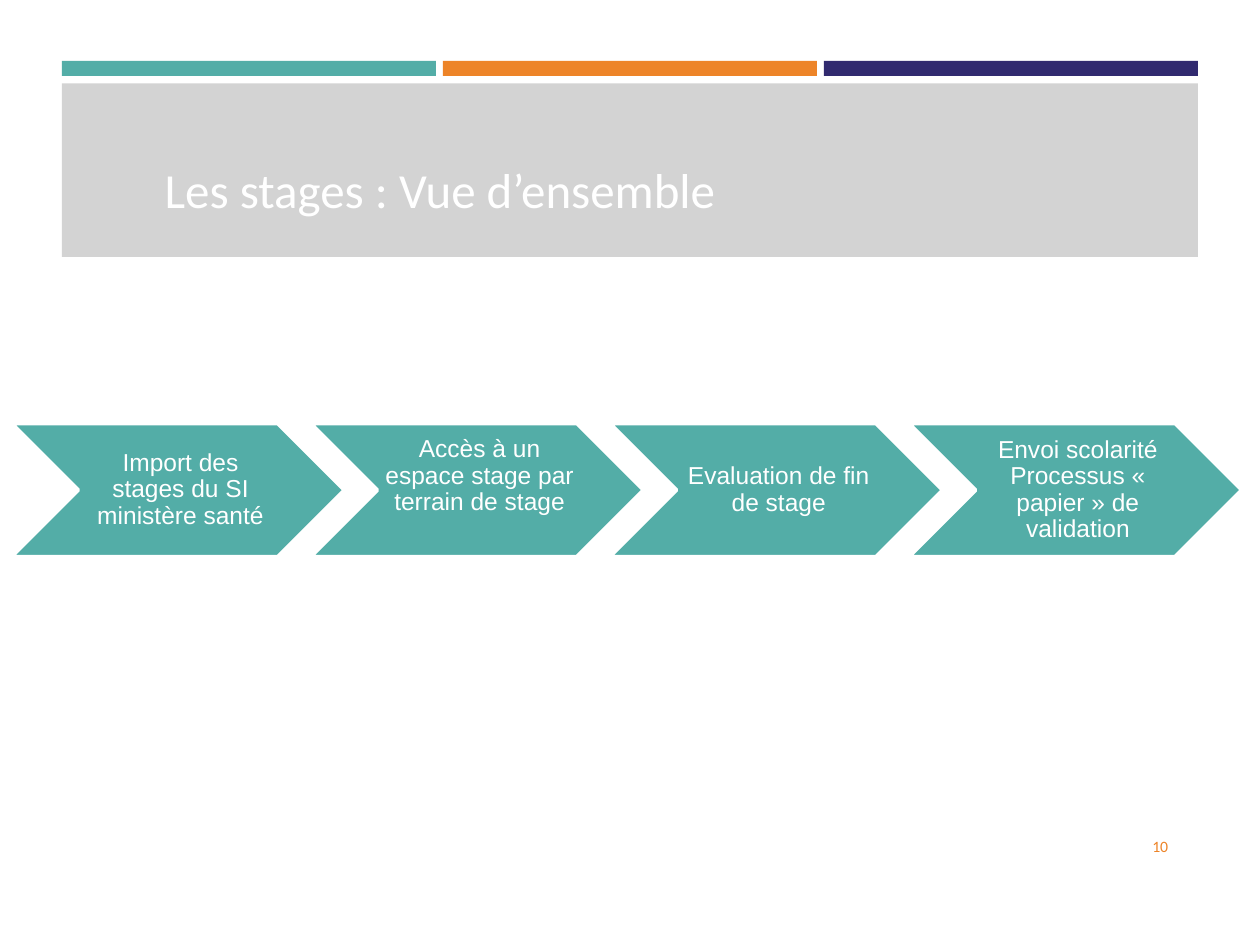
from pptx import Presentation
from pptx.dml.color import RGBColor
from pptx.enum.shapes import MSO_SHAPE as SHAPE
from pptx.enum.text import MSO_ANCHOR as ANCHOR, PP_ALIGN as ALIGN
from pptx.util import Cm, Pt

TEAL, ORANGE, NAVY = "53ADA7", "ED8428", "312A6F"
GREY, WHITE = "D3D3D3", "FFFFFF"


def paint(fmt, color):
    fmt.solid()
    fmt.fore_color.rgb = RGBColor.from_string(color)


def add_run(p, text, size, font, color):
    r = p.add_run()
    r.text = text
    r.font.size = Pt(size)
    r.font.name = font
    paint(r.font.fill, color)


prs = Presentation()
prs.slide_width, prs.slide_height = Cm(25.4), Cm(19.05)
s = prs.slides.add_slide(prs.slide_layouts[6])

# Three header bars and the title band
bars = [(1.25 + i * 7.68, 1.23, 7.54, 0.3, color)
        for i, color in enumerate([TEAL, ORANGE, NAVY])]
for x, y, w, h, color in bars + [(1.25, 1.68, 22.9, 3.5, GREY)]:
    sp = s.shapes.add_shape(SHAPE.RECTANGLE, Cm(x), Cm(y), Cm(w), Cm(h))
    sp.shadow.inherit = False
    paint(sp.fill, color)
    sp.line.fill.background()

# Title and slide number
labels = [
    ("Les stages : Vue d’ensemble", (3.07, 2.72, 20.96, 1.8),
     28, WHITE, ANCHOR.BOTTOM, ALIGN.LEFT),
    ("10", (21.67, 16.54, 2.13, 1.02), 9, ORANGE, ANCHOR.MIDDLE, ALIGN.RIGHT),
]
for text, box, size, color, anchor, align in labels:
    tf = s.shapes.add_textbox(*[Cm(v) for v in box]).text_frame
    tf.word_wrap = True
    tf.vertical_anchor = anchor
    p = tf.paragraphs[0]
    p.alignment = align
    add_run(p, text, size, "Calibri", color)

# Chevron process: lines of text and bottom inset of each step
steps = [
    (["Import des stages du SI ministère santé"], 0.05),
    (["Accès à un espace stage par terrain de stage"], 0.6),
    (["Evaluation de fin de stage"], 0.05),
    (["Envoi scolarité", "Processus « papier » de validation"], 0.05),
]
for i, (lines, bottom) in enumerate(steps):
    sp = s.shapes.add_shape(SHAPE.CHEVRON, Cm(0.24 + i * 6.03), Cm(8.54),
                            Cm(6.7), Cm(2.68))
    sp.shadow.inherit = False
    paint(sp.fill, TEAL)
    paint(sp.line.fill, WHITE)
    sp.line.width = Pt(2)
    tf = sp.text_frame
    tf.word_wrap = True
    tf.vertical_anchor = ANCHOR.MIDDLE
    tf.margin_left, tf.margin_right = Cm(0.15), Cm(0.05)
    tf.margin_top, tf.margin_bottom = Cm(0.05), Cm(bottom)
    p = tf.paragraphs[0]
    p.alignment = ALIGN.CENTER
    p.line_spacing = 0.9
    for n, line in enumerate(lines):
        if n:
            p.add_line_break()
        add_run(p, line, 14, "Arial", WHITE)

prs.save("out.pptx")
